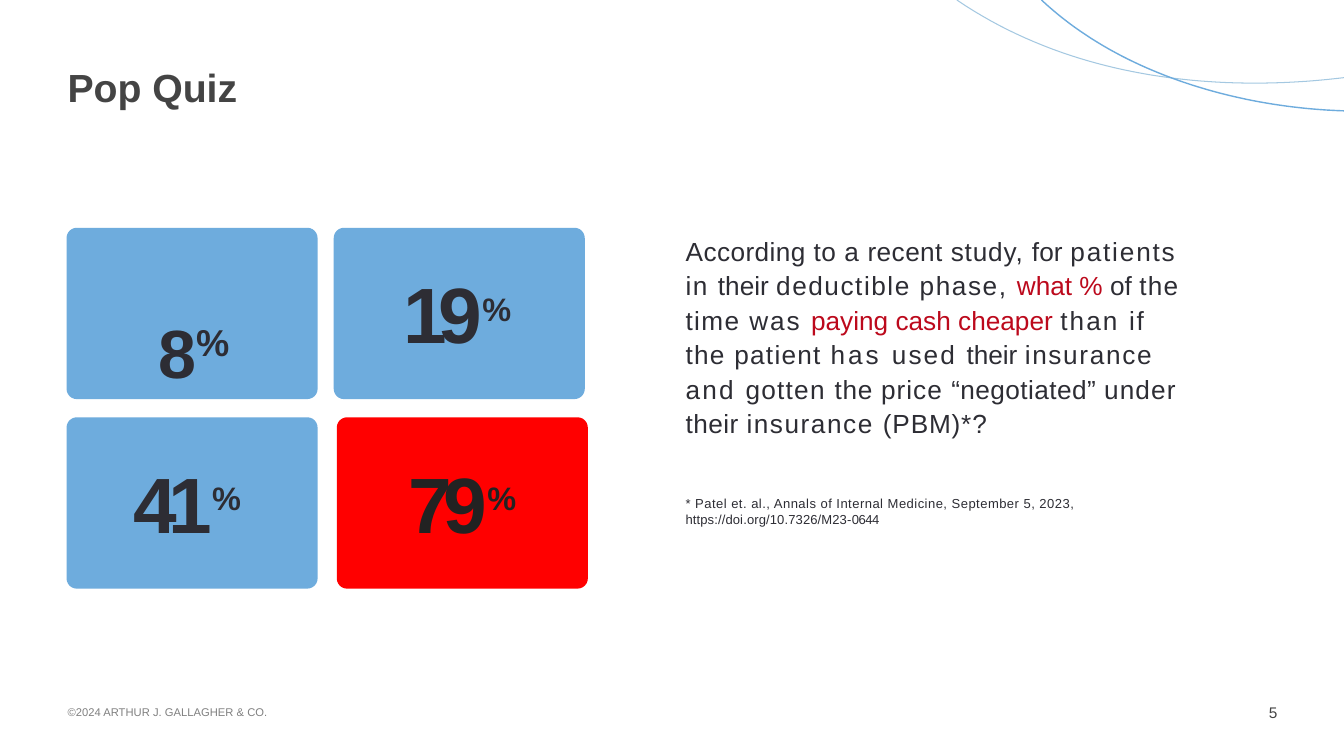
from lxml import etree
from pptx import Presentation
from pptx import util as u
from pptx.dml.color import RGBColor
from pptx.enum import shapes, text
from pptx.oxml.ns import qn

COLORS = {"ink": "2D2D34", "dark": "222222", "heading": "444444", "grey": "808080",
          "crimson": "BC091C", "blue": "6EACDD", "pale": "A4C8E1", "red": "FF0000"}

deck = Presentation()
deck.slide_width, deck.slide_height = u.Inches(13.33), u.Inches(7.5)
slide = deck.slides.add_slide(deck.slide_layouts[1])


def color(name):
    return RGBColor.from_string(COLORS[name])


def write(box, place, runs, size, indent=0, wrap=True, top=0):
    """Place a box and fill its paragraph; runs are (words, spacing, color[, size, baseline])."""
    box.left, box.top, box.width, box.height = map(u.Inches, place)
    frame = box.text_frame
    frame.word_wrap = wrap
    frame.vertical_anchor = text.MSO_ANCHOR.TOP
    frame.margin_left = frame.margin_right = frame.margin_bottom = 0
    frame.margin_top = u.Inches(top)
    line = frame.paragraphs[0]
    line.alignment = text.PP_ALIGN.LEFT
    line.space_before = u.Pt(0)
    props = line._p.get_or_add_pPr()
    props.set("marL", str(u.Inches(indent)))
    props.set("indent", "0")
    etree.SubElement(props, qn("a:buNone"))
    for words, spacing, tint, *raised in runs:
        run = line.add_run()
        run.text = words.rstrip("\n")
        run.font.name = "Arial"
        run.font.size = u.Pt(raised[0] if raised else size)
        run.font.color.rgb = color(tint)
        run._r.rPr.set("spc", str(round(spacing * 100)))
        if raised:
            run._r.rPr.set("baseline", str(raised[1] * 1000))
        if words.endswith("\n"):
            line.add_line_break()
    return line


# Corner curves: cubic Béziers drawn as short segments
CURVES = [("pale", 0.75, [(13.33, 0.77), (12.43, 0.88), (10.83, 0.91), (9.49, 0)]),
          ("blue", 1, [(13.33, 1.1), (12.34, 1.07), (11.14, 0.76), (10.33, 0)])]
STEPS = 48
for tint, weight, controls in CURVES:
    points = []
    for step in range(STEPS + 1):
        t = step / STEPS
        shares = ((1 - t) ** 3, 3 * t * (1 - t) ** 2, 3 * t * t * (1 - t), t ** 3)
        points.append([u.Inches(sum(s * c[axis] for s, c in zip(shares, controls)))
                       for axis in (0, 1)])
    outline = slide.shapes.build_freeform(*points[0])
    outline.add_line_segments(points[1:], close=False)
    curve = outline.convert_to_shape()
    curve.shadow.inherit = False
    curve.fill.background()
    curve.line.color.rgb = color(tint)
    curve.line.width = u.Pt(weight)

# Title
heading = write(slide.shapes.title, (0.67, 0.68, 10.22, 0.53), [("Pop Quiz", 0, "heading")], 28)
heading.line_spacing = 0.9
heading.font.bold = True

# Question
QUESTION = [
    ("According to ", 0.3), ("a ", 0.5), ("recent ", 0.3), ("study, ", 0.6), ("for ", 0.1),
    ("patients\n", 1.3), ("in ", 1.1), ("their ", 0), ("deductible phase, ", 1.1),
    ("what % ", 0, "crimson"), ("of ", 0), ("the\n", 0.9), ("time ", 1), ("was ", 1.4),
    ("paying cash cheaper ", 0, "crimson"), ("than ", 1.5), ("if\n", 1.3), ("the patient ", 0.9),
    ("has ", 2.1), ("used ", 1.5), ("their ", 0), ("insurance\n", 1.2), ("and ", 1.6),
    ("gotten ", 0.9), ("the ", 0.5), ("price ", 0.7), ("“negotiated” ", 0.3), ("under\n", 0.8),
    ("their ", 0.3), ("insurance ", 1.1), ("(PBM)*?", 0.6)]
question = write(slide.placeholders[1], (6.78, 2.28, 5.1, 2.07),
                 [(words, spacing, *(tint or ["ink"])) for words, spacing, *tint in QUESTION],
                 18.7, indent=0.02, top=0.02)
question.line_spacing = 1.1

# Citation
CITATION = [("* Patel et. al., Annals of Internal Medicine, September 5, 2023, ", 0.36),
            ("https://doi.org/10.7326/M23-", 0.1), ("0644", -0.3)]
write(slide.shapes.add_textbox(0, 0, 0, 0), (6.78, 4.9, 4.5, 0.33),
      [(*part, "ink") for part in CITATION], 9.3, indent=0.02, top=0.02)

# Answer tiles: column, row, nudge, fill, number offset in the tile, number runs
PERCENT = ("%", -8.8, "ink", 40, 40)
ANSWERS = [
    (0, 0, 0, "blue", (0.85, 0.09, 0.84),
     [("8", -11.9, "ink", 84, -19), ("%", -7.9, "ink", 26.7, 0)]),
    (1, 0, 0, "blue", (0.63, 0.35, 1.32), [("19", -5.9, "ink"), PERCENT]),
    (0, 1, 0, "blue", (0.6, 0.35, 1.32), [("41", -5.9, "ink"), PERCENT]),
    (1, 1, 0.03, "red", (0.65, 0.35, 1.32),
     [("79", -5.9, "dark"), ("%", -8.8, "dark", 40, 40)])]
TILE_W, TILE_H, PITCH_X, PITCH_Y = 2.49, 1.7, 2.65, 1.88
for column, row, nudge, fill, (dx, dy, width), number in ANSWERS:
    left, top = 0.66 + column * PITCH_X + nudge, 2.26 + row * PITCH_Y
    tile = slide.shapes.add_shape(shapes.MSO_SHAPE.ROUNDED_RECTANGLE,
                                  *map(u.Inches, (left, top, TILE_W, TILE_H)))
    tile.adjustments[0] = 0.06
    tile.shadow.inherit = False
    tile.fill.solid()
    tile.fill.fore_color.rgb = color(fill)
    tile.line.fill.background()
    answer = write(slide.shapes.add_textbox(0, 0, 0, 0), (left + dx, top + dy, width, 0.96),
                   number, 56, indent=0.06, top=0.02)
    for run in answer.runs:
        run.font.bold = True

# Footer
write(slide.shapes.add_textbox(0, 0, 0, 0), (0.67, 7, 2.01, 0.13),
      [("©2024 ARTHUR J. GALLAGHER & CO.", 0, "grey")], 8, wrap=False)
page = write(slide.shapes.add_textbox(0, 0, 0, 0), (12.48, 6.98, 0.19, 0.19),
             [("5", 0, "heading")], 11)
page.alignment = text.PP_ALIGN.RIGHT

deck.save("out.pptx")
